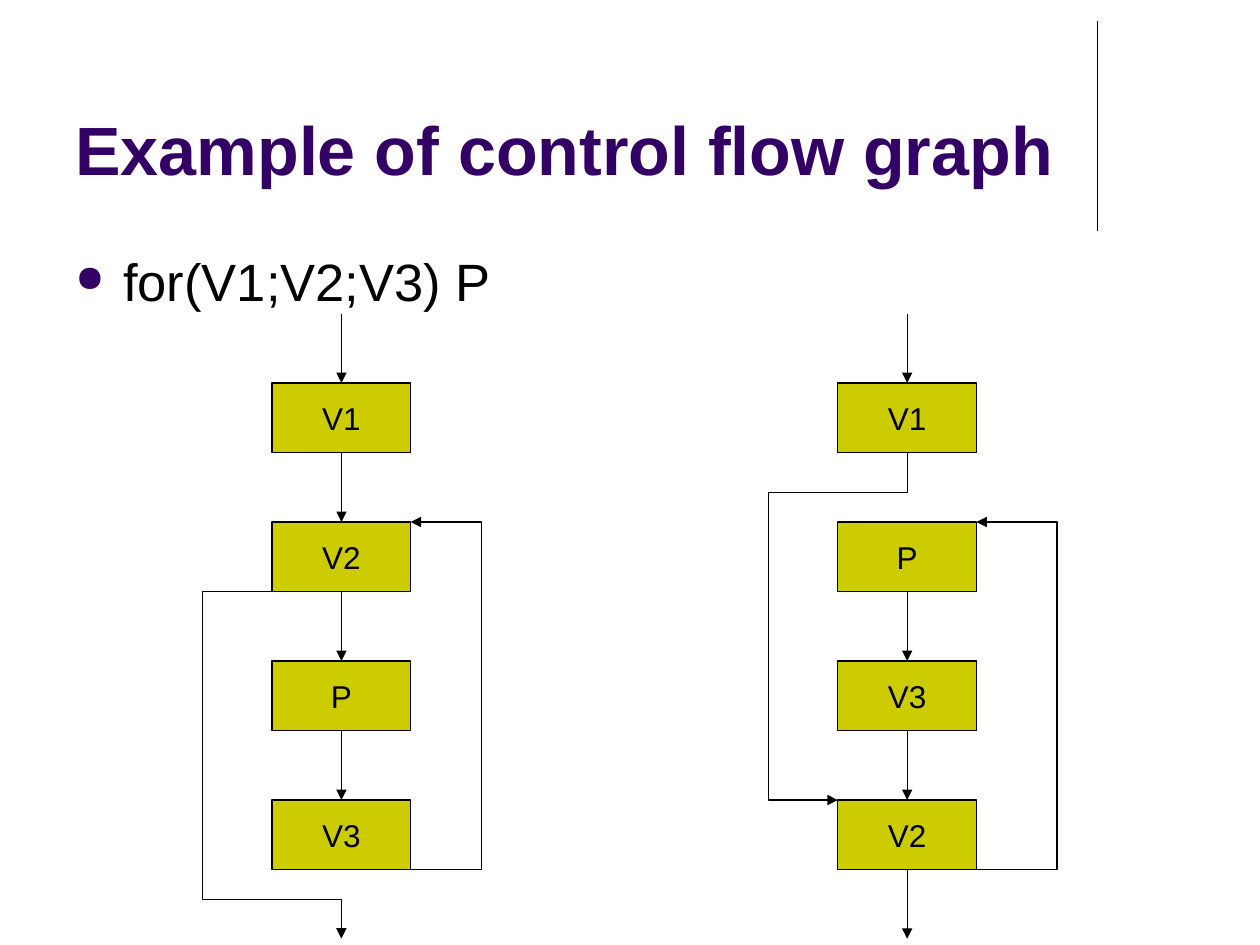
from dataclasses import dataclass

from lxml import etree
from pptx import Presentation
from pptx.dml.color import RGBColor
from pptx.enum.shapes import MSO_CONNECTOR, MSO_SHAPE
from pptx.enum.text import MSO_ANCHOR, PP_ALIGN
from pptx.oxml.ns import qn
from pptx.util import Inches, Pt

RECT = MSO_SHAPE.RECTANGLE
LINE = MSO_CONNECTOR.STRAIGHT
MIDDLE, BOTTOM = MSO_ANCHOR.MIDDLE, MSO_ANCHOR.BOTTOM
CENTER = PP_ALIGN.CENTER

COLORS = {"title": "330066", "ink": "000000", "box": "CCCC00"}
FONT = "Arial"

# Grid of the two graphs: four rows, gaps as tall as the boxes
WIDTH, HEIGHT = 1.1, 0.55
FIRST, LAST = 3.04, 6.35
TOPS = [FIRST + row * (LAST - FIRST) / 3 for row in range(4)]
ENDS = [top + HEIGHT for top in TOPS]
EXIT = 7.45


@dataclass
class Graph:
    left: float
    names: list[str]
    links: list[int]  # rows with an arrow to the next row
    paths: list[list[tuple[float, float]]]  # x counts from the left of the boxes
    leaves: bool  # straight arrow out of the last box


GRAPHS = [
    Graph(6.65, ["V1", "P", "V3", "V2"], [1, 2], [
        [(WIDTH, ENDS[3]), (1.74, ENDS[3]), (1.74, TOPS[1]), (WIDTH, TOPS[1])],
        [(WIDTH / 2, ENDS[0]), (WIDTH / 2, 3.91), (-0.55, 3.91),
         (-0.55, TOPS[3]), (0, TOPS[3])],
    ], True),
    Graph(2.16, ["V1", "V2", "P", "V3"], [0, 1, 2], [
        [(WIDTH, ENDS[3]), (1.66, ENDS[3]), (1.66, TOPS[1]), (WIDTH, TOPS[1])],
        [(0, ENDS[1]), (-0.55, ENDS[1]), (-0.55, 7.14),
         (WIDTH / 2, 7.14), (WIDTH / 2, EXIT)],
    ], False),
]


def color(key: str) -> RGBColor:
    return RGBColor.from_string(COLORS[key])


def style(line) -> None:
    line.color.rgb = color("ink")
    line.width = Pt(0.75)


def point(shape) -> None:
    """Put an arrowhead at the end of the line."""
    tip = etree.SubElement(shape.line._get_or_add_ln(), qn("a:tailEnd"))
    tip.set("type", "triangle")


def write(frame, text: str, size: float, key: str, bold: bool = False):
    para = frame.paragraphs[0]
    para.text = text
    font = para.font
    font.name, font.size, font.bold = FONT, Pt(size), bold
    font.color.rgb = color(key)
    return para


def add_text(slide, left: float, top: float, width: float, height: float):
    frame = slide.shapes.add_textbox(
        Inches(left), Inches(top), Inches(width), Inches(height)).text_frame
    frame.word_wrap = True
    return frame


def add_line(slide, x: float, top: float, end: float):
    line = slide.shapes.add_connector(
        LINE, Inches(x), Inches(top), Inches(x), Inches(end))
    style(line.line)
    etree.SubElement(line._element.spPr, qn("a:effectLst"))
    return line


def add_box(slide, left: float, top: float, name: str):
    box = slide.shapes.add_shape(
        RECT, Inches(left), Inches(top), Inches(WIDTH), Inches(HEIGHT))
    box.shadow.inherit = False
    box.fill.solid()
    box.fill.fore_color.rgb = color("box")
    style(box.line)
    frame = box.text_frame
    frame.word_wrap = False
    frame.vertical_anchor = MIDDLE
    write(frame, name, 18, "ink").alignment = CENTER
    return box


def add_path(slide, left: float, spots: list[tuple[float, float]]) -> None:
    spots = [(Inches(left + x), Inches(y)) for x, y in spots]
    pen = slide.shapes.build_freeform(*spots[0])
    pen.add_line_segments(spots[1:], close=False)
    path = pen.convert_to_shape()
    path.shadow.inherit = False
    path.fill.background()
    style(path.line)
    point(path)


def add_graph(slide, graph: Graph) -> None:
    boxes = [add_box(slide, graph.left, top, name)
             for top, name in zip(TOPS, graph.names)]
    mid = graph.left + WIDTH / 2

    # Straight arrows: into the first box, between rows, out of the last box
    entry = add_line(slide, mid, FIRST - HEIGHT, FIRST)
    entry.end_connect(boxes[0], 0)
    point(entry)
    for row in graph.links:
        link = add_line(slide, mid, ENDS[row], TOPS[row + 1])
        link.begin_connect(boxes[row], 2)
        link.end_connect(boxes[row + 1], 0)
        point(link)
    if graph.leaves:
        leave = add_line(slide, mid, ENDS[3], EXIT)
        leave.begin_connect(boxes[3], 2)
        point(leave)

    # Bent arrows
    for spots in graph.paths:
        add_path(slide, graph.left, spots)


def add_bullet(para) -> None:
    props = para._p.get_or_add_pPr()
    props.set("marL", str(Inches(0.38)))
    props.set("indent", str(-Inches(0.38)))
    tint = etree.SubElement(props, qn("a:buClr"))
    etree.SubElement(tint, qn("a:srgbClr")).set("val", COLORS["title"])
    etree.SubElement(props, qn("a:buSzPct")).set("val", "70000")
    etree.SubElement(props, qn("a:buChar")).set("char", "●")


def main() -> None:
    deck = Presentation()
    deck.slide_width, deck.slide_height = Inches(10), Inches(7.5)
    slide = deck.slides.add_slide(deck.slide_layouts[6])

    # Rule beside the title
    add_line(slide, 8.71, 0.17, 1.83)

    # Title
    title = add_text(slide, 0.5, 0.13, 8.25, 1.42)
    title.vertical_anchor = BOTTOM
    write(title, "Example of control flow graph", 39, "title", True)

    # Loop statement
    body = add_text(slide, 0.5, 1.88, 9, 0.61)
    body.margin_top = Inches(0.1)
    add_bullet(body.paragraphs[0])
    write(body, "for(V1;V2;V3) P", 30, "ink")

    # Control flow graphs
    for graph in GRAPHS:
        add_graph(slide, graph)

    deck.save("out.pptx")


if __name__ == "__main__":
    main()
